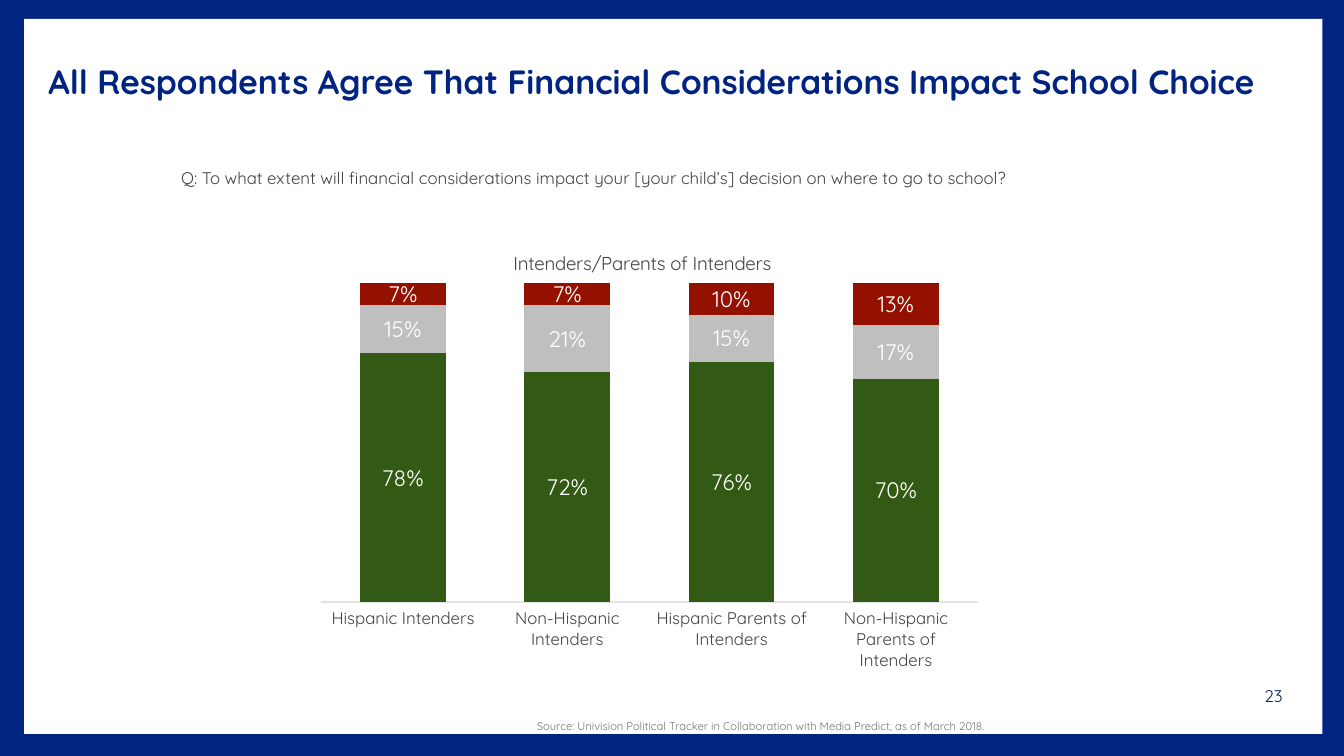
"""Build a slide with a stacked column chart on financial considerations."""
import pptx
import pptx.util
import pptx.chart.data
import pptx.dml.color
import pptx.enum.chart
import pptx.enum.shapes
import pptx.enum.text
import pptx.oxml
import pptx.oxml.ns

Inches, Pt = pptx.util.Inches, pptx.util.Pt
ALIGN = pptx.enum.text.PP_ALIGN
MIDDLE = pptx.enum.text.MSO_ANCHOR.MIDDLE
FONT = "Quicksand"
COLORS = {
    "navy": "012480", "white": "FFFFFF", "text": "424242", "source": "747474",
    "number": "002060", "axis": "E3E3E3",
    "green": "335A14", "gray": "BFBFBF", "red": "941100",
}
CATEGORIES = ["Hispanic Intenders", "Non-Hispanic Intenders",
              "Hispanic Parents of Intenders", "Non-Hispanic Parents of Intenders"]
SERIES = [
    ("Series 1", "green", (0.78, 0.72, 0.76, 0.70)),
    ("Series 2", "gray", (0.15, 0.21, 0.15, 0.17)),
    ("Series 3", "red", (0.07, 0.07, 0.10, 0.13)),
]


def rgb(name):
    return pptx.dml.color.RGBColor.from_string(COLORS[name])


def set_font(font, size, color, bold=False):
    font.name, font.size, font.bold = FONT, Pt(size), bold
    font.color.rgb = rgb(color)


def place(sp, box):
    sp.left, sp.top, sp.width, sp.height = (Inches(v) for v in box)


def add_panel(s, box, color):
    sp = s.shapes.add_shape(pptx.enum.shapes.MSO_SHAPE.RECTANGLE, *map(Inches, box))
    sp.shadow.inherit = False
    sp.fill.solid()
    sp.fill.fore_color.rgb = rgb(color)
    sp.line.fill.background()


def add_title(s, box, text):
    sp = s.shapes.title
    place(sp, box)
    sp.element.getparent().append(sp.element)
    tf = sp.text_frame
    tf.text = text
    tf.word_wrap = True
    tf.vertical_anchor = MIDDLE
    tf.margin_left = Inches(0.47)
    p = tf.paragraphs[0]
    p.alignment, p.line_spacing = ALIGN.LEFT, 0.8
    set_font(p.runs[0].font, 18, "navy", True)


def add_text(s, box, text, size, color, align=ALIGN.LEFT, anchor=None):
    tf = s.shapes.add_textbox(*map(Inches, box)).text_frame
    tf.text = text
    tf.word_wrap = True
    tf.vertical_anchor = anchor
    p = tf.paragraphs[0]
    p.alignment = align
    set_font(p.runs[0].font, size, color)


def set_layout(parent, index, **values):
    old = parent.find(pptx.oxml.ns.qn("c:layout"))
    if old is not None:
        parent.remove(old)
    items = "".join(f'<c:{tag} val="{val}"/>' for tag, val in values.items())
    parent.insert(index, pptx.oxml.parse_xml(
        f'<c:layout {pptx.oxml.ns.nsdecls("c")}>'
        f'<c:manualLayout>{items}</c:manualLayout></c:layout>'))


def format_axes(chart):
    axis = chart.category_axis
    axis.major_tick_mark = pptx.enum.chart.XL_TICK_MARK.NONE
    axis.format.line.color.rgb = rgb("axis")
    axis.format.line.width = Pt(0.75)
    set_font(axis.tick_labels.font, 9, "text")
    chart.value_axis.visible = False
    chart.value_axis.has_major_gridlines = False
    chart.value_axis.maximum_scale = 1


def format_series(series, color):
    series.format.fill.solid()
    series.format.fill.fore_color.rgb = rgb(color)
    labels = series.data_labels
    labels.show_value = True
    labels.number_format, labels.number_format_is_linked = "0%", False
    labels.position = pptx.enum.chart.XL_LABEL_POSITION.CENTER
    set_font(labels.font, 12, "white")


def add_stacked_chart(s, box, title):
    data = pptx.chart.data.CategoryChartData(number_format="0%")
    data.categories = CATEGORIES
    for name, _, values in SERIES:
        data.add_series(name, values)
    kind = pptx.enum.chart.XL_CHART_TYPE.COLUMN_STACKED_100
    chart = s.shapes.add_chart(kind, *map(Inches, box), data).chart
    set_font(chart.font, 10, "text")
    chart.has_legend = False
    tf = chart.chart_title.text_frame
    tf.text = title
    set_font(tf.paragraphs[0].runs[0].font, 10, "text")
    plot = chart.plots[0]
    plot.gap_width, plot.overlap = 92, 100
    plot.vary_by_categories = False
    format_axes(chart)
    for series, (_, color, _) in zip(plot.series, SERIES):
        format_series(series, color)
    root = chart.element.chart
    set_layout(root.find(pptx.oxml.ns.qn("c:title")), 1,
               xMode="edge", yMode="edge", x=0.42, y=0.05)
    set_layout(root.plotArea, 0, layoutTarget="inner", xMode="edge", yMode="edge",
               x=0.21, y=0.13, w=0.73, h=0.69)


def main():
    prs = pptx.Presentation()
    prs.slide_width = Inches(10)
    prs.slide_height = prs.slide_width * 9 // 16
    s = prs.slides.add_slide(prs.slide_layouts[5])
    add_panel(s, (0, -0.01, 10, 5.64), "navy")
    add_panel(s, (0.18, 0.14, 9.66, 5.32), "white")
    add_stacked_chart(s, (0.98, 1.66, 6.7, 3.44), "Intenders/Parents of Intenders")
    add_title(s, (-0.11, 0.28, 10.02, 0.71),
              "All Respondents Agree That Financial Considerations Impact School Choice")
    add_text(s, (0.31, 5.3, 7.11, 0.2),
             "Source: Univision Political Tracker in Collaboration with Media Predict, "
             "as of March 2018.", 6, "source", ALIGN.RIGHT)
    add_text(s, (1.25, 1.2, 7.5, 0.25),
             "Q: To what extent will financial considerations impact your "
             "[your child’s] decision on where to go to school?", 9, "text")
    add_text(s, (9.29, 5.03, 0.37, 0.3), "23", 9, "number", ALIGN.CENTER, MIDDLE)
    prs.save("out.pptx")


if __name__ == "__main__":
    main()
